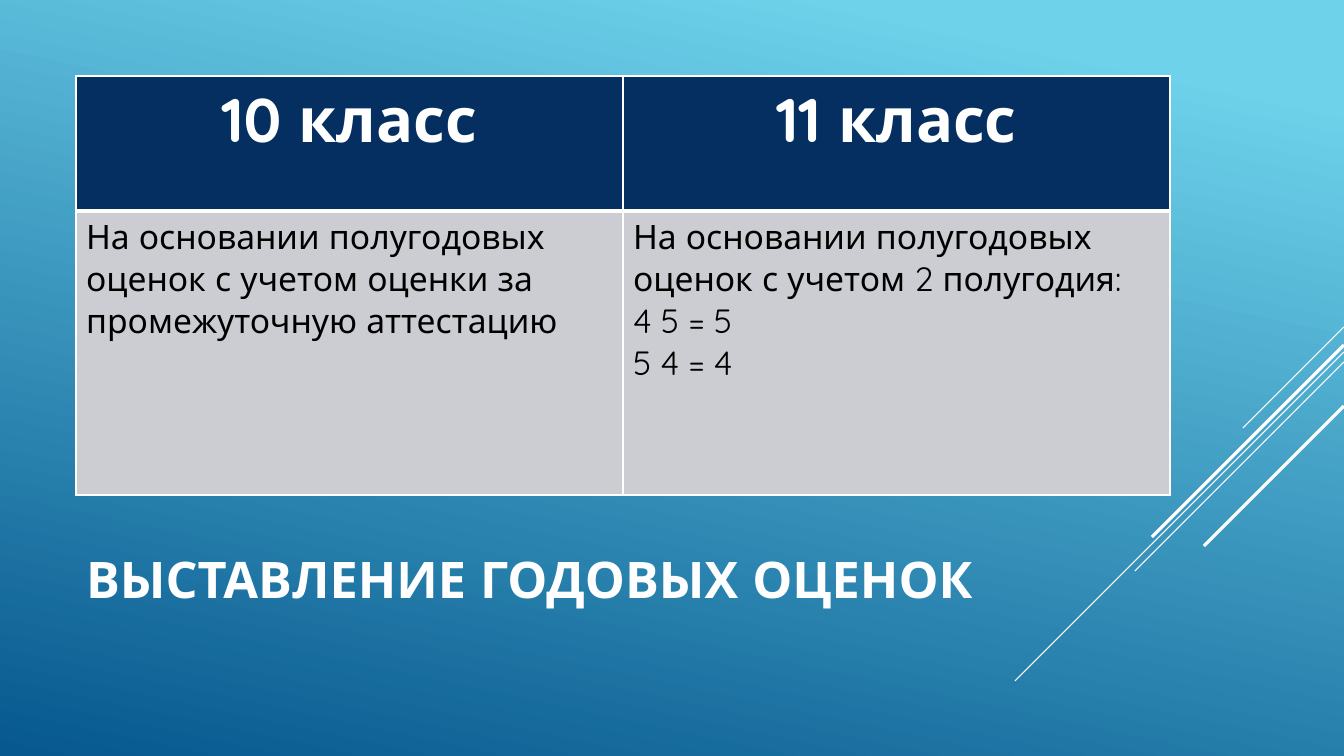
"""Build the slide on how year-end marks are set in grades 10 and 11."""
from dataclasses import dataclass

from lxml import etree
from pptx import Presentation
from pptx import util as u
from pptx.dml.color import RGBColor
from pptx.enum import shapes, text
from pptx.oxml.ns import qn

TITLE = "ВЫСТАВЛЕНИЕ ГОДОВЫХ ОЦЕНОК"
GRADES = {
    "10 класс": ["На основании полугодовых оценок с учетом оценки за промежуточную аттестацию"],
    "11 класс": ["На основании полугодовых оценок с учетом 2 полугодия:", "4 5 = 5", "5 4 = 4"],
}
WIDTH, HEIGHT = 1344, 756
TITLE_BOX = (76, 495, 940, 166)
TABLE_LEFT, TABLE_TOP, COLUMN_WIDTH = 76, 76, 547
ROW_HEIGHTS = (135, 284)
DIAGONALS = [(327, 101, 0.75), (352, 329, 0.75), (362, 209, 0.75), (345, 192, 2.25), (406, 140, 2.25)]


@dataclass(frozen=True)
class Theme:
    font: str = "Quicksand"
    white: str = "FFFFFF"
    black: str = "000000"
    navy: str = "052F61"
    grey: str = "CCCDD2"
    gradient: tuple = ((0.1, "6ED2EB"), (1.0, "06588E"))
    angle: int = 258
    title_size: int = 36
    head_size: int = 44
    body_size: int = 24
    thin: int = 1
    thick: int = 3


THEME = Theme()
HEAD = dict(size=u.Pt(THEME.head_size), bold=True)
BODY = dict(size=u.Pt(THEME.body_size), bold=False)


def px(length):
    return round(length * 914400 / 100.8)


def write(frame, lines, color, style, align):
    for index, line in enumerate(lines):
        para = frame.paragraphs[0] if index == 0 else frame.add_paragraph()
        para.alignment = align
        span = para.add_run()
        span.text = line
        span.font.color.rgb = RGBColor.from_string(color)
        for name, value in {"name": THEME.font, **style}.items():
            setattr(span.font, name, value)


def add_borders(cell, widths):
    properties = cell._tc.get_or_add_tcPr()
    for side, width in zip("LRTB", widths):
        line = etree.SubElement(properties, qn(f"a:ln{side}"), w=str(u.Pt(width)))
        fill = etree.SubElement(line, qn("a:solidFill"))
        etree.SubElement(fill, qn("a:srgbClr"), val=THEME.white)


def paint_background(page):
    fill = page.background.fill
    fill.gradient()
    fill.gradient_angle = THEME.angle
    for stop, (position, color) in zip(fill.gradient_stops, THEME.gradient):
        stop.position = position
        stop.color.rgb = RGBColor.from_string(color)


def add_diagonals(page):
    for top, run, width in DIAGONALS:
        line = page.shapes.add_connector(
            shapes.MSO_CONNECTOR.STRAIGHT, px(WIDTH), px(top), px(WIDTH - run), px(top + run))
        line.line.color.rgb = RGBColor.from_string(THEME.white)
        line.line.width = u.Pt(width)
        etree.SubElement(line._element.spPr, qn("a:effectLst"))


def add_title(page):
    title = page.shapes.title
    for name, value in zip(("left", "top", "width", "height"), TITLE_BOX):
        setattr(title, name, px(value))
    frame = title.text_frame
    frame.word_wrap = True
    frame.auto_size = text.MSO_AUTO_SIZE.NONE
    frame.vertical_anchor = text.MSO_ANCHOR.MIDDLE
    style = dict(size=u.Pt(THEME.title_size), bold=True)
    write(frame, [TITLE], THEME.white, style, text.PP_ALIGN.LEFT)


def add_grades(page):
    table = page.shapes.add_table(
        len(ROW_HEIGHTS), len(GRADES), px(TABLE_LEFT), px(TABLE_TOP),
        px(COLUMN_WIDTH * len(GRADES)), px(sum(ROW_HEIGHTS))).table
    for row, height in zip(table.rows, ROW_HEIGHTS):
        row.height = px(height)
    thin, thick = THEME.thin, THEME.thick
    for column, (grade, rules) in enumerate(GRADES.items()):
        table.columns[column].width = px(COLUMN_WIDTH)
        rows = [
            ([grade], THEME.white, HEAD, text.PP_ALIGN.CENTER, THEME.navy, (thin, thin, thin, thick)),
            (rules, THEME.black, BODY, text.PP_ALIGN.LEFT, THEME.grey, (thin, thin, thick, thin)),
        ]
        for row, (lines, color, style, align, fill, widths) in enumerate(rows):
            cell = table.cell(row, column)
            write(cell.text_frame, lines, color, style, align)
            add_borders(cell, widths)
            cell.fill.solid()
            cell.fill.fore_color.rgb = RGBColor.from_string(fill)


def main():
    deck = Presentation()
    deck.slide_width, deck.slide_height = px(WIDTH), px(HEIGHT)
    page = deck.slides.add_slide(deck.slide_layouts[5])
    paint_background(page)
    add_diagonals(page)
    add_title(page)
    add_grades(page)
    deck.save("out.pptx")


if __name__ == "__main__":
    main()
